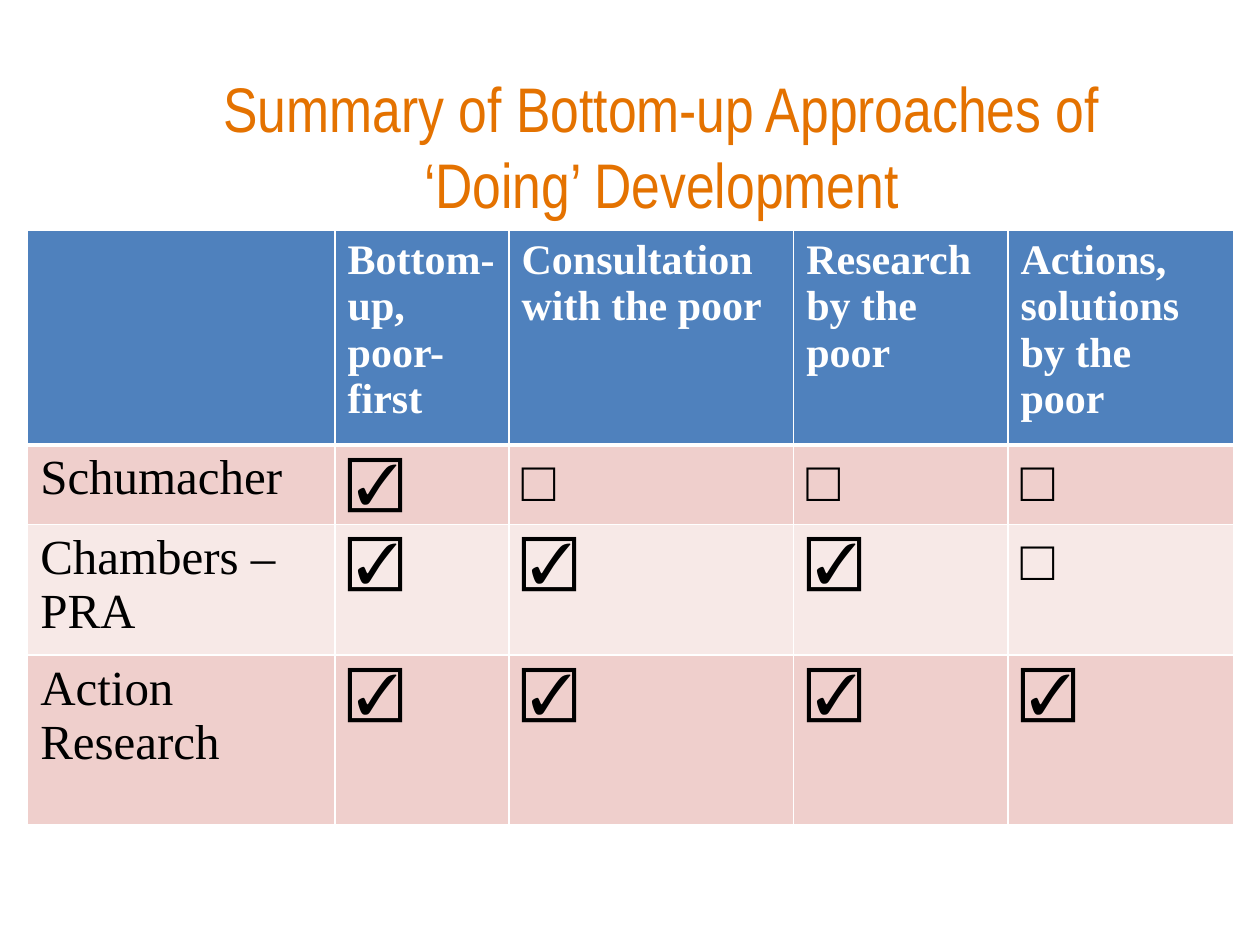
from pptx import Presentation
from pptx.dml.color import RGBColor
from pptx.enum.text import MSO_ANCHOR, PP_ALIGN
from pptx.oxml.ns import qn
from pptx.util import Inches, Pt
from lxml.etree import SubElement

COLORS = {
    "title": "E47200",
    "header": "4F81BD",
    "band_dark": "EFCFCC",
    "band_light": "F7E9E7",
    "white": "FFFFFF",
    "black": "000000",
}
YES, NO = "☑", "□"
HEADINGS = ["", "Bottom-up, poor-first", "Consultation with the poor",
            "Research by the poor", "Actions, solutions by the poor"]
APPROACHES = [
    ["Schumacher", YES, NO, NO, NO],
    ["Chambers – PRA", YES, YES, YES, NO],
    ["Action Research", YES, YES, YES, YES],
]
COLUMN_WIDTHS = [2.44, 1.38, 2.26, 1.7, 1.79]
ROW_HEIGHTS = [1.35, 0.52, 0.94, 1.35]


def rgb(name):
    return RGBColor.from_string(COLORS[name])


def style_font(font, face, size, color, bold=False):
    font.name = face
    font.size = Pt(size)
    font.color.rgb = rgb(color)
    font.bold = bold


def set_borders(cell, widths):
    """Draw white borders; the line elements must precede the cell's fill."""
    properties = cell._tc.get_or_add_tcPr()
    for side, width in widths.items():
        line = SubElement(properties, qn(f"a:ln{side}"), w=str(Pt(width)))
        fill = SubElement(line, qn("a:solidFill"))
        SubElement(fill, qn("a:srgbClr"), val=COLORS["white"])


def add_title(slide, left, top, width, height):
    frame = slide.shapes.add_textbox(left, top, width, height).text_frame
    frame.word_wrap = True
    frame.vertical_anchor = MSO_ANCHOR.MIDDLE
    title = frame.paragraphs[0]
    title.text = "Summary of Bottom-up Approaches of ‘Doing’ Development"
    title.alignment = PP_ALIGN.CENTER
    style_font(title.font, "Arial Narrow", 36, "title")


def fill_cell(cell, text, row, column):
    # A thick rule separates the header from the body
    set_borders(cell, {"L": 1, "R": 1, "T": 3 if row == 1 else 1,
                       "B": 3 if row == 0 else 1})
    band = "header" if row == 0 else "band_dark" if row % 2 else "band_light"
    cell.fill.solid()
    cell.fill.fore_color.rgb = rgb(band)

    label = cell.text_frame.paragraphs[0]
    label.text = text
    if row == 0:
        style_font(label.font, "Times New Roman", 24, "white", bold=True)
    else:
        size = 28 if column == 0 else 32
        style_font(label.font, "Times New Roman", size, "black")


def add_approaches_table(slide, left, top, width, height):
    rows = [HEADINGS] + APPROACHES
    table = slide.shapes.add_table(len(rows), len(HEADINGS),
                                   left, top, width, height).table
    for column, column_width in zip(table.columns, COLUMN_WIDTHS):
        column.width = Inches(column_width)
    for row, row_height in zip(table.rows, ROW_HEIGHTS):
        row.height = Inches(row_height)
    for r, texts in enumerate(rows):
        for c, text in enumerate(texts):
            fill_cell(table.cell(r, c), text, r, c)


def main():
    deck = Presentation()
    deck.slide_width, deck.slide_height = Inches(10), Inches(7.5)
    slide = deck.slides.add_slide(deck.slide_layouts[6])
    add_title(slide, Inches(1), Inches(0.72), Inches(8.5), Inches(0.87))
    add_approaches_table(slide, Inches(0.22), Inches(1.83),
                         Inches(sum(COLUMN_WIDTHS)), Inches(sum(ROW_HEIGHTS)))
    deck.save("out.pptx")


if __name__ == "__main__":
    main()
